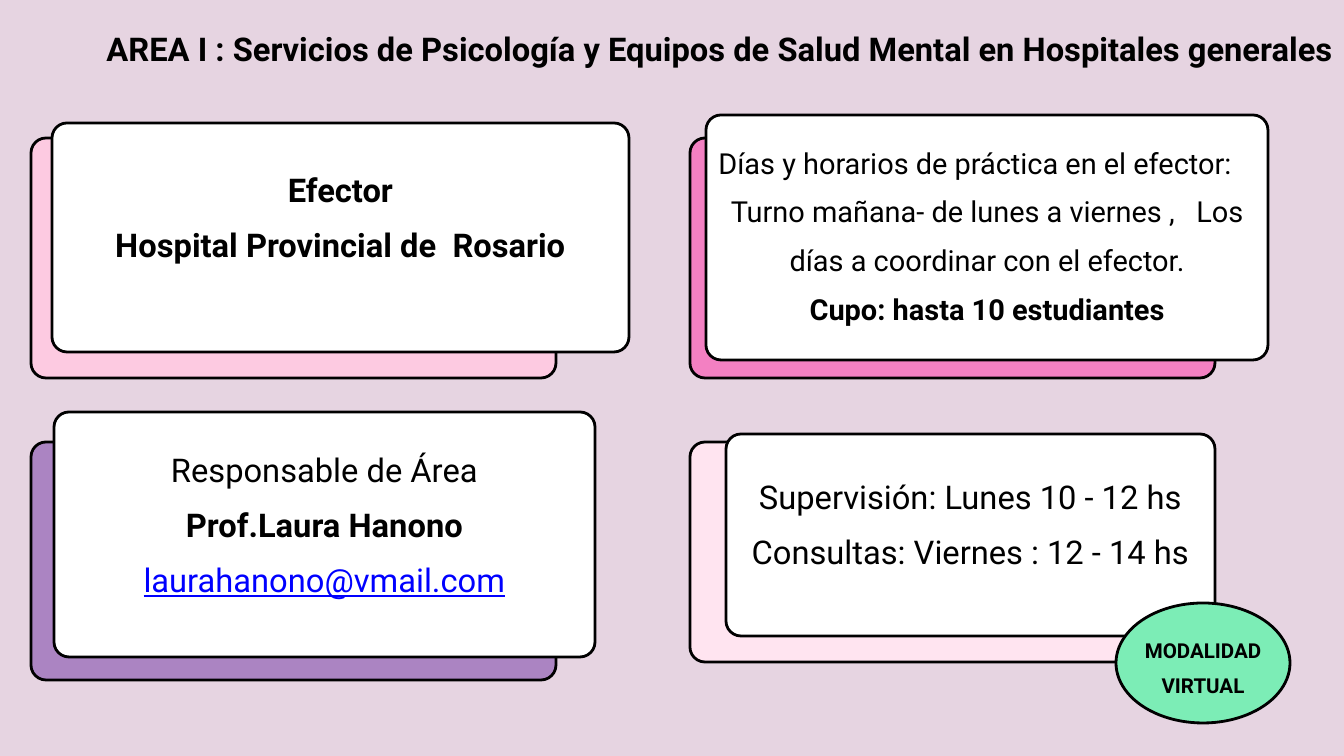
from dataclasses import dataclass

from pptx import Presentation
from pptx.dml.color import RGBColor
from pptx.enum.shapes import MSO_SHAPE
from pptx.enum.text import MSO_ANCHOR, PP_ALIGN
from pptx.util import Emu, Pt

ROUNDED, OVAL = MSO_SHAPE.ROUNDED_RECTANGLE, MSO_SHAPE.OVAL
TOP, MIDDLE = MSO_ANCHOR.TOP, MSO_ANCHOR.MIDDLE
LEFT, CENTER, RIGHT = PP_ALIGN.LEFT, PP_ALIGN.CENTER, PP_ALIGN.RIGHT
EMU_PER_PX = 914400 * 20 / 1344
CORNER_RADIUS = 15
SIDE_MARGIN = 8


@dataclass(frozen=True)
class Theme:
    """Colours, font and type sizes of the slide."""

    background: str = "E6D4E1"
    ink: str = "000000"
    paper: str = "FFFFFF"
    mail: str = "0000FF"
    pink: str = "FDCAE1"
    magenta: str = "F380C2"
    purple: str = "AB84C2"
    blush: str = "FFE4F0"
    mint: str = "7CEDB6"
    font: str = "Roboto"
    heading: int = 35
    schedule: int = 31
    badge: int = 22
    outline: int = 3
    leading: float = 1.4


THEME = Theme()


def px(length):
    """Turn pixels into EMU."""
    return Emu(round(length * EMU_PER_PX))


def color(value):
    """Turn a hex string into a colour."""
    return RGBColor.from_string(value)


def line(text, **style):
    """Describe one paragraph as its text and format."""
    return text, style


def write(para, text, size=THEME.heading, ink=THEME.ink, bold=False,
          underline=False, align=CENTER):
    """Write formatted text into a paragraph."""
    para.alignment = align
    para.line_spacing = THEME.leading
    span = para.add_run()
    span.text = text
    span.font.name = THEME.font
    span.font.size = Pt(size)
    span.font.bold = bold
    span.font.underline = underline
    span.font.color.rgb = color(ink)


def fill_text(box, lines, anchor=TOP, top=0, side=0):
    """Put the lines into a box with its margins."""
    frame = box.text_frame
    frame.word_wrap = True
    frame.vertical_anchor = anchor
    frame.margin_left = frame.margin_right = px(side)
    frame.margin_top, frame.margin_bottom = px(top), 0
    for index, (text, style) in enumerate(lines):
        para = frame.add_paragraph() if index else frame.paragraphs[0]
        write(para, text, **style)


def add_outlined(page, kind, bounds, fill):
    """Add a filled shape with the common outline."""
    shape = page.shapes.add_shape(kind, *map(px, bounds))
    shape.shadow.inherit = False
    shape.fill.solid()
    shape.fill.fore_color.rgb = color(fill)
    shape.line.color.rgb = color(THEME.ink)
    shape.line.width = Pt(THEME.outline)
    return shape


def add_panel(page, bounds, fill):
    """Add a rounded rectangle with the common corner radius."""
    panel = add_outlined(page, ROUNDED, bounds, fill)
    panel.adjustments[0] = CORNER_RADIUS / min(bounds[2:])
    return panel


def add_card(page, back, tint, front, top, lines):
    """Add a white text card over a tinted panel."""
    add_panel(page, back, tint)
    card = add_panel(page, front, THEME.paper)
    fill_text(card, lines, top=top, side=SIDE_MARGIN)


def add_title(page, text):
    """Add the right-aligned title."""
    box = page.shapes.add_textbox(px(0), px(13), px(1334), px(46))
    fill_text(box, [line(text, bold=True, align=RIGHT)])


def add_badge(page, bounds, text):
    """Add the oval badge."""
    badge = add_outlined(page, OVAL, bounds, THEME.mint)
    fill_text(badge, [line(text, size=THEME.badge, bold=True)], anchor=MIDDLE)


def main():
    """Build the slide and save it."""
    deck = Presentation()
    deck.slide_width, deck.slide_height = px(1344), px(756)
    page = deck.slides.add_slide(deck.slide_layouts[6])
    page.background.fill.solid()
    page.background.fill.fore_color.rgb = color(THEME.background)

    add_title(page, "AREA I : Servicios de Psicología y Equipos de Salud Mental en Hospitales generales")
    add_card(page, (31, 138, 525, 240), THEME.pink, (52, 123, 577, 229), 27, [
        line("Efector", bold=True),
        line("Hospital Provincial de  Rosario", bold=True),
    ])
    add_card(page, (690, 138, 525, 240), THEME.magenta, (706, 115, 562, 245), 12, [
        line("Días y horarios de práctica en el efector:", size=THEME.schedule, align=LEFT),
        line("Turno mañana- de lunes a viernes ,   Los días a coordinar con el efector.",
             size=THEME.schedule),
        line("Cupo: hasta 10 estudiantes", size=THEME.schedule, bold=True),
    ])
    add_card(page, (31, 442, 525, 238), THEME.purple, (54, 412, 541, 245), 18, [
        line("Responsable de Área"),
        line("Prof.Laura Hanono", bold=True),
        line("laurahanono@vmail.com", ink=THEME.mail, underline=True),
    ])
    add_card(page, (690, 442, 513, 220), THEME.blush, (726, 434, 489, 202), 23, [
        line("Supervisión: Lunes 10 - 12 hs"),
        line("Consultas: Viernes : 12 - 14 hs"),
    ])
    add_badge(page, (1116, 603, 174, 120), "MODALIDAD VIRTUAL")
    deck.save("out.pptx")


if __name__ == "__main__":
    main()
